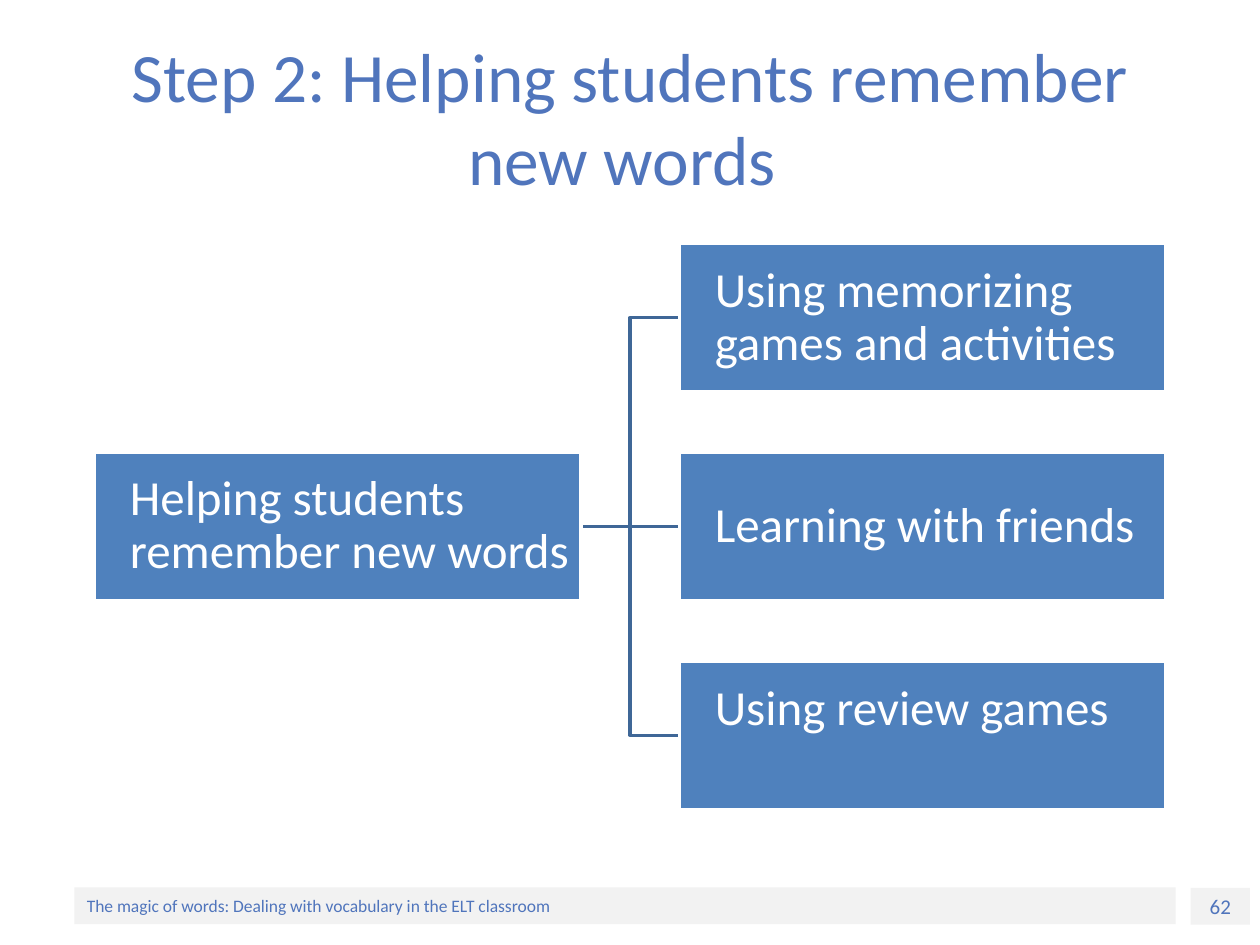
from lxml.etree import SubElement
from pptx import Presentation
from pptx.dml.color import RGBColor
from pptx.enum.shapes import MSO_CONNECTOR, MSO_SHAPE
from pptx.enum.text import MSO_ANCHOR, MSO_AUTO_SIZE, PP_ALIGN
from pptx.oxml.ns import qn
from pptx.util import Cm, Pt

TITLE_BLUE = RGBColor(0x50, 0x75, 0xBC)
BOX_BLUE = RGBColor(0x4F, 0x81, 0xBD)
LINE_BLUE = RGBColor(0x3F, 0x67, 0x97)
LIGHT_GREY = RGBColor(0xF2, 0xF2, 0xF2)
WHITE = RGBColor(0xFF, 0xFF, 0xFF)

presentation = Presentation()
presentation.slide_width = Cm(25.4)
presentation.slide_height = Cm(19.05)
slide = presentation.slides.add_slide(presentation.slide_layouts[5])


def write(shape, text, size, color, alignment):
    frame = shape.text_frame
    frame.word_wrap = True
    frame.auto_size = MSO_AUTO_SIZE.NONE
    frame.vertical_anchor = MSO_ANCHOR.MIDDLE
    paragraph = frame.paragraphs[0]
    paragraph.alignment = alignment
    run = paragraph.add_run()
    run.text = text
    run.font.name = "Calibri"
    run.font.size = Pt(size)
    run.font.color.rgb = color
    return paragraph


def add_rectangle(left, top, width, height, fill):
    shape = slide.shapes.add_shape(
        MSO_SHAPE.RECTANGLE, Cm(left), Cm(top), Cm(width), Cm(height))
    shape.shadow.inherit = False
    shape.fill.solid()
    shape.fill.fore_color.rgb = fill
    shape.line.fill.background()
    return shape


# Title
title = slide.shapes.title
title.left, title.top, title.width, title.height = Cm(1.27), Cm(0.76), Cm(22.86), Cm(3.18)
write(title, "Step 2: Helping students remember new words ", 39.6, TITLE_BLUE, PP_ALIGN.CENTER)

# Footer bar and page number
footer = add_rectangle(1.5, 17.89, 22.2, 0.74, LIGHT_GREY)
write(footer, "The magic of words: Dealing with vocabulary in the ELT classroom",
      10, TITLE_BLUE, PP_ALIGN.LEFT)
page_number = add_rectangle(24, 17.9, 1.2, 0.74, LIGHT_GREY)
write(page_number, "62", 12, TITLE_BLUE, PP_ALIGN.CENTER)

# Branch lines, behind the boxes and joined to them below
connectors = []
for kind in (MSO_CONNECTOR.ELBOW, MSO_CONNECTOR.STRAIGHT, MSO_CONNECTOR.ELBOW):
    connector = slide.shapes.add_connector(kind, 0, 0, 0, 0)
    connector.line.color.rgb = LINE_BLUE
    connector.line.width = Pt(2)
    SubElement(connector._element.spPr, qn("a:effectLst"))
    connectors.append(connector)

# Root box and its three branches; the last text sits one line higher
ROOT_LEFT, BRANCH_LEFT = 1.91, 13.7
BRANCH_TOP, BRANCH_STEP = 4.91, 4.21
entries = [
    ("Helping students remember new words", ROOT_LEFT, 1, 0.05),
    ("Using memorizing games and activities", BRANCH_LEFT, 0, 0.05),
    ("Learning with friends", BRANCH_LEFT, 1, 0.05),
    ("Using review games", BRANCH_LEFT, 2, 1.1),
]
boxes = []
for text, left, row, bottom_margin in entries:
    box = add_rectangle(left, BRANCH_TOP + row * BRANCH_STEP, 9.8, 2.99, BOX_BLUE)
    box.line.color.rgb = WHITE
    box.line.width = Pt(2)
    write(box, text, 28, WHITE, PP_ALIGN.LEFT).line_spacing = 0.9
    frame = box.text_frame
    frame.margin_left = Cm(0.71)
    frame.margin_top = frame.margin_right = Cm(0.05)
    frame.margin_bottom = Cm(bottom_margin)
    boxes.append(box)

root, *branches = boxes
for connector, branch in zip(connectors, branches):
    connector.begin_connect(root, 3)
    connector.end_connect(branch, 1)

presentation.save("out.pptx")
